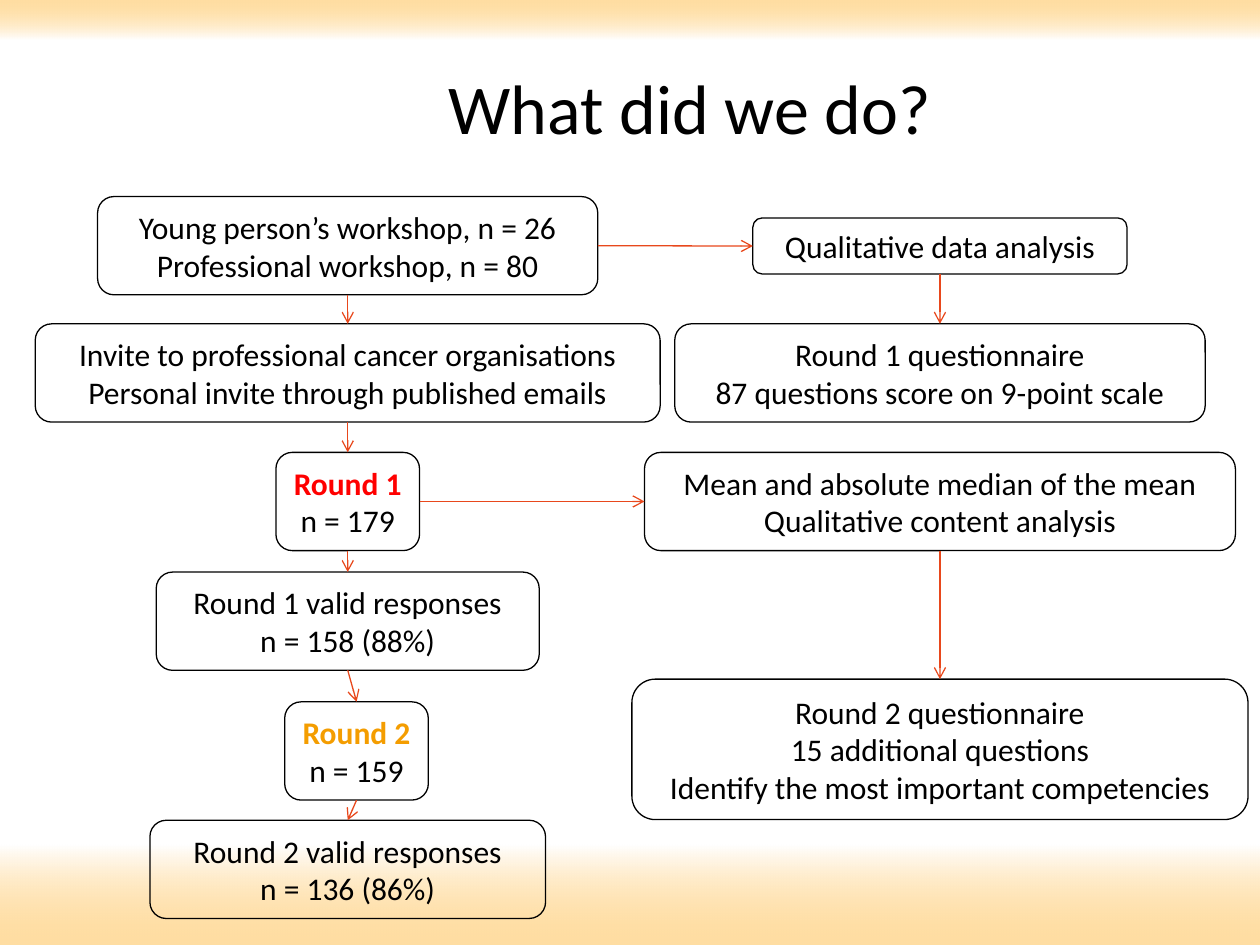
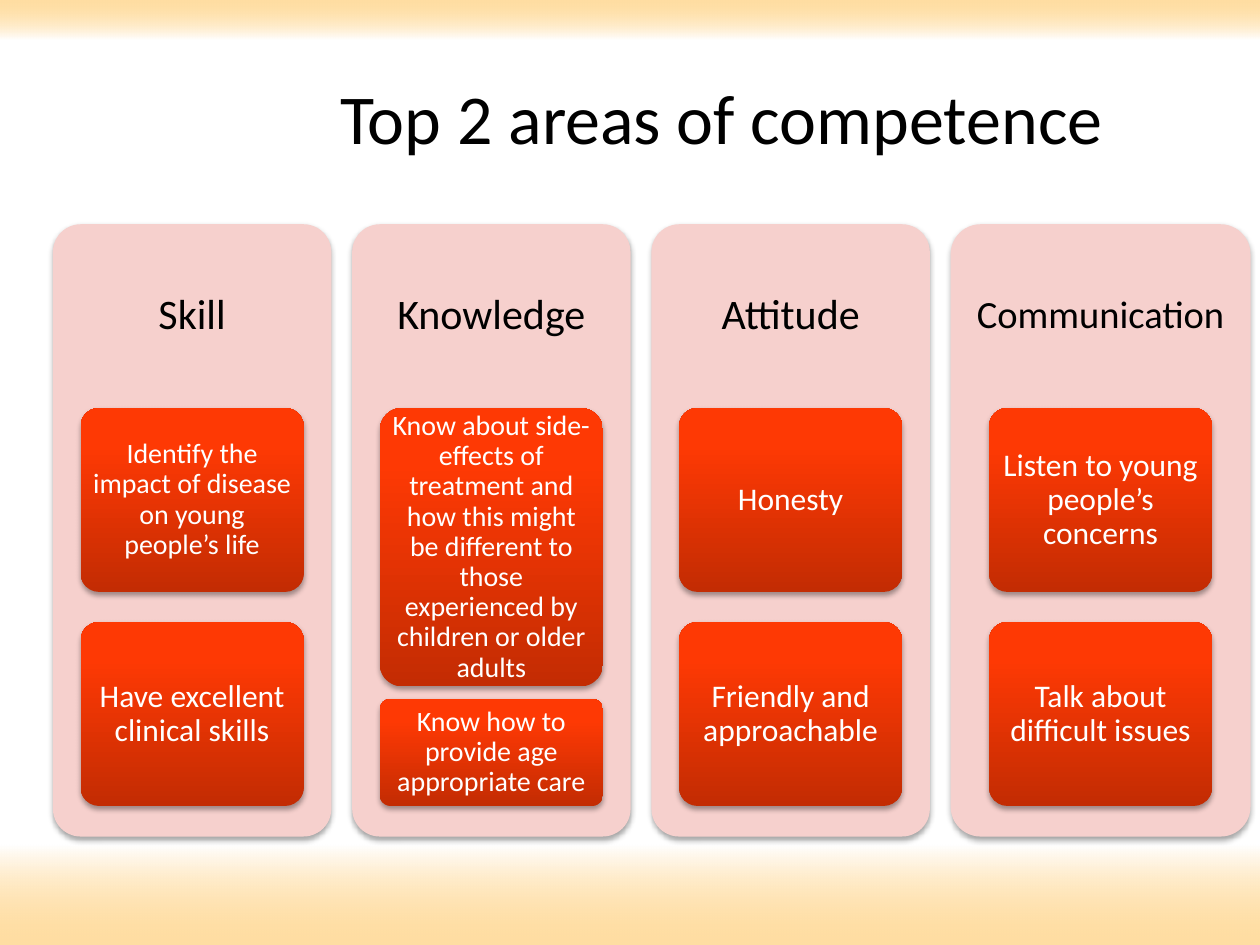
from pptx import Presentation
from pptx import util as u
from pptx.dml.color import RGBColor
from pptx.enum import shapes, text
from pptx.oxml import parse_xml
from pptx.oxml.ns import nsdecls, qn

BLACK = RGBColor(0x00, 0x00, 0x00)
WHITE = RGBColor(0xFF, 0xFF, 0xFF)
RED = RGBColor(0xFF, 0x00, 0x00)
AMBER = RGBColor(0xF4, 0x9D, 0x00)
BAND = RGBColor(0xFF, 0xBD, 0x47)
ARROW = RGBColor(0xE8, 0x48, 0x1C)
PANEL = RGBColor(0xF6, 0xD0, 0xCD)
CARD_DARK = RGBColor(0xC3, 0x2C, 0x03)
CARD_LIGHT = RGBColor(0xFE, 0x39, 0x04)
CARD_TOP = RGBColor(0xFF, 0x39, 0x04)

FONT = "Calibri"
WIDTH, HEIGHT = 10, 7.5
TITLE_SIZE = (7.55, 1.25)

# Bands: top, height, gradient stops as (position, colour, opacity), all in percent
BANDS = [
    (0, 0.31, [(0, BAND, 50), (100, WHITE, 100)]),
    (6.7, 0.8, [(0, WHITE, 100), (100, BAND, 50)]),
]
CARD_STOPS = [(0, CARD_DARK, 100), (80, CARD_LIGHT, 100), (100, CARD_TOP, 100)]

# Flow boxes: name -> (centre, top, width, lines)
LEFT, RIGHT, ROUND_2 = 2.76, 7.46, 2.83
FLOW_BOXES = {
    "workshops": (LEFT, 1.56, 3.97, ["Young person’s workshop, n = 26",
                                     "Professional workshop, n = 80"]),
    "invites": (LEFT, 2.57, 4.96, ["Invite to professional cancer organisations",
                                   "Personal invite through published emails"]),
    "round 1": (LEFT, 3.59, 1.14, ["Round 1", "n = 179"]),
    "valid 1": (LEFT, 4.54, 3.04, ["Round 1 valid responses", "n = 158 (88%)"]),
    "round 2": (ROUND_2, 5.57, 1.14, ["Round 2", "n = 159"]),
    "valid 2": (LEFT, 6.51, 3.14, ["Round 2 valid responses", "n = 136 (86%)"]),
    "analysis": (RIGHT, 1.73, 2.97, ["Qualitative data analysis"]),
    "questionnaire 1": (RIGHT, 2.57, 4.21, ["Round 1 questionnaire",
                                            "87 questions score on 9-point scale"]),
    "scoring": (RIGHT, 3.59, 4.69, ["Mean and absolute median of the mean",
                                    "Qualitative content analysis"]),
    "questionnaire 2": (RIGHT, 5.39, 4.89, ["Round 2 questionnaire",
                                            "15 additional questions",
                                            "Identify the most important competencies"]),
}
ROUND_COLOURS = {"Round 1": RED, "Round 2": AMBER}
DOWNWARD = [
    ("workshops", "invites"), ("invites", "round 1"), ("round 1", "valid 1"),
    ("valid 1", "round 2"), ("round 2", "valid 2"),
    ("analysis", "questionnaire 1"), ("scoring", "questionnaire 2"),
]
ACROSS = [("workshops", "analysis"), ("round 1", "scoring")]
TOP_SIDE, LEFT_SIDE, BOTTOM_SIDE, RIGHT_SIDE = range(4)

# Competence areas: heading, heading size, panel width, cards as (text, size, height)
AREAS = [
    ("Skill", 24, 2.21, [
        ("Identify the impact of disease on young people’s life", 16, 1.46),
        ("Have excellent clinical skills", 18, 1.46)]),
    ("Knowledge", 24, 2.21, [
        ("Know about side-effects of treatment and how this might be different "
         "to those experienced by children or older adults", 16, 2.21),
        ("Know how to provide age appropriate care", 16, 0.85)]),
    ("Attitude", 24, 2.21, [
        ("Honesty", 18, 1.46),
        ("Friendly and approachable", 18, 1.46)]),
    ("Communication", 22, 2.38, [
        ("Listen to young people’s concerns", 18, 1.46),
        ("Talk about difficult issues", 18, 1.46)]),
]
PANEL_LEFT, PANEL_PITCH, PANEL_TOP, PANEL_HEIGHT = 0.42, 2.375, 1.78, 4.86
HEADING_HEIGHT, CARDS_HEIGHT = 0.3 * PANEL_HEIGHT, 0.65 * PANEL_HEIGHT
CARD_WIDTH = 1.77


def inches(*lengths):
    return [u.Inches(length) for length in lengths]


def set_gradient(shape, stops, angle):
    marks = "".join(
        f'<a:gs pos="{position * 1000}"><a:srgbClr val="{colour}">'
        f'<a:alpha val="{opacity * 1000}"/></a:srgbClr></a:gs>'
        for position, colour, opacity in stops)
    shape.fill.background()
    properties = shape.element.spPr
    properties.replace(properties.find(qn("a:noFill")), parse_xml(
        f'<a:gradFill {nsdecls("a")} rotWithShape="1"><a:gsLst>{marks}</a:gsLst>'
        f'<a:lin ang="{angle * 60000}" scaled="0"/></a:gradFill>'))


def add_soft_shadow(shape):
    shape.element.spPr.find(qn("a:effectLst")).append(parse_xml(
        f'<a:outerShdw {nsdecls("a")} blurRad="{u.Pt(3.1)}" dist="{u.Pt(1.8)}" '
        'dir="5400000" rotWithShape="0"><a:srgbClr val="000000">'
        '<a:alpha val="35000"/></a:srgbClr></a:outerShdw>'))


def add_plain_shape(slide, kind, *box):
    """Add a preset shape with neither shadow nor outline."""
    shape = slide.shapes.add_shape(kind, *inches(*box))
    shape.shadow.inherit = False
    shape.line.fill.background()
    return shape


def write(shape, lines, size, colour=BLACK, spacing=1.0, wrap=True, margins=(0.1, 0.05)):
    frame = shape.text_frame
    side, edge = inches(*margins)
    settings = dict(word_wrap=wrap, vertical_anchor=text.MSO_ANCHOR.MIDDLE,
                    margin_left=side, margin_right=side,
                    margin_top=edge, margin_bottom=edge)
    for name, value in settings.items():
        setattr(frame, name, value)
    for index, line in enumerate(lines):
        paragraph = frame.paragraphs[0] if index == 0 else frame.add_paragraph()
        paragraph.alignment = text.PP_ALIGN.CENTER
        paragraph.line_spacing = spacing
        run = paragraph.add_run()
        run.text = line
        font_format = dict(name=FONT, size=u.Pt(size), bold=line in ROUND_COLOURS)
        for name, value in font_format.items():
            setattr(run.font, name, value)
        run.font.color.rgb = ROUND_COLOURS.get(line, colour)


def add_titled_slide(presentation, title, left, top):
    slide = presentation.slides.add_slide(presentation.slide_layouts[5])
    shape = slide.shapes.title
    shape.left, shape.top, shape.width, shape.height = inches(left, top, *TITLE_SIZE)
    write(shape, [title], 40)
    return slide


def move_bands_to_master(presentation, slide):
    """Draw the bands on a slide, then place them behind everything on the master."""
    master_tree = presentation.slide_master.shapes.element
    for top, height, stops in BANDS:
        band = add_plain_shape(slide, shapes.MSO_SHAPE.FLOWCHART_PROCESS,
                               0, top, WIDTH, height)
        set_gradient(band, stops, 90)
        master_tree.insert(2, band.element)


def add_flow_box(slide, centre, top, width, lines):
    height = 0.11 + 0.335 * len(lines)
    box = add_plain_shape(slide, shapes.MSO_SHAPE.ROUNDED_RECTANGLE,
                          centre - width / 2, top, width, height)
    box.fill.background()
    box.line.color.rgb = BLACK
    box.line.width = u.Pt(0.75)
    write(box, lines, 18, wrap=False)
    return box


def add_arrow(slide, start, start_side, end, end_side):
    arrow = slide.shapes.add_connector(shapes.MSO_CONNECTOR.STRAIGHT, 0, 0, 0, 0)
    arrow.begin_connect(start, start_side)
    arrow.end_connect(end, end_side)
    arrow.line.color.rgb = ARROW
    arrow.line.width = u.Pt(0.75)
    arrow.line._get_or_add_ln().append(
        parse_xml(f'<a:tailEnd {nsdecls("a")} type="arrow"/>'))
    arrow.element.spPr.append(parse_xml(f'<a:effectLst {nsdecls("a")}/>'))


def add_raised_box(slide, *box):
    shape = add_plain_shape(slide, shapes.MSO_SHAPE.ROUNDED_RECTANGLE, *box)
    shape.adjustments[0] = 0.1
    add_soft_shadow(shape)
    return shape


def add_area(slide, left, heading, heading_size, width, cards):
    panel = add_raised_box(slide, left, PANEL_TOP, width, PANEL_HEIGHT)
    panel.fill.solid()
    panel.fill.fore_color.rgb = PANEL
    label = slide.shapes.add_textbox(*inches(left, PANEL_TOP, width, HEADING_HEIGHT))
    write(label, [heading], heading_size, spacing=0.9, margins=(0.09, 0.09))

    gap = CARDS_HEIGHT - sum(height for _, _, height in cards)
    card_left = left + (width - CARD_WIDTH) / 2
    top = PANEL_TOP + HEADING_HEIGHT
    for words, size, height in cards:
        card = add_raised_box(slide, card_left, top, CARD_WIDTH, height)
        set_gradient(card, CARD_STOPS, 270)
        write(card, [words], size, WHITE, spacing=0.9, margins=(0.04, 0.03))
        top += height + gap


def main():
    presentation = Presentation()
    presentation.slide_width, presentation.slide_height = inches(WIDTH, HEIGHT)

    flow = add_titled_slide(presentation, "What did we do?", 1.7, 0.22)
    move_bands_to_master(presentation, flow)
    boxes = {name: add_flow_box(flow, *box) for name, box in FLOW_BOXES.items()}
    for start, end in DOWNWARD:
        add_arrow(flow, boxes[start], BOTTOM_SIDE, boxes[end], TOP_SIDE)
    for start, end in ACROSS:
        add_arrow(flow, boxes[start], RIGHT_SIDE, boxes[end], LEFT_SIDE)

    competence = add_titled_slide(presentation, "Top 2 areas of competence", 1.95, 0.3)
    for column, area in enumerate(AREAS):
        add_area(competence, PANEL_LEFT + column * PANEL_PITCH, *area)

    presentation.save("out.pptx")


if __name__ == "__main__":
    main()
